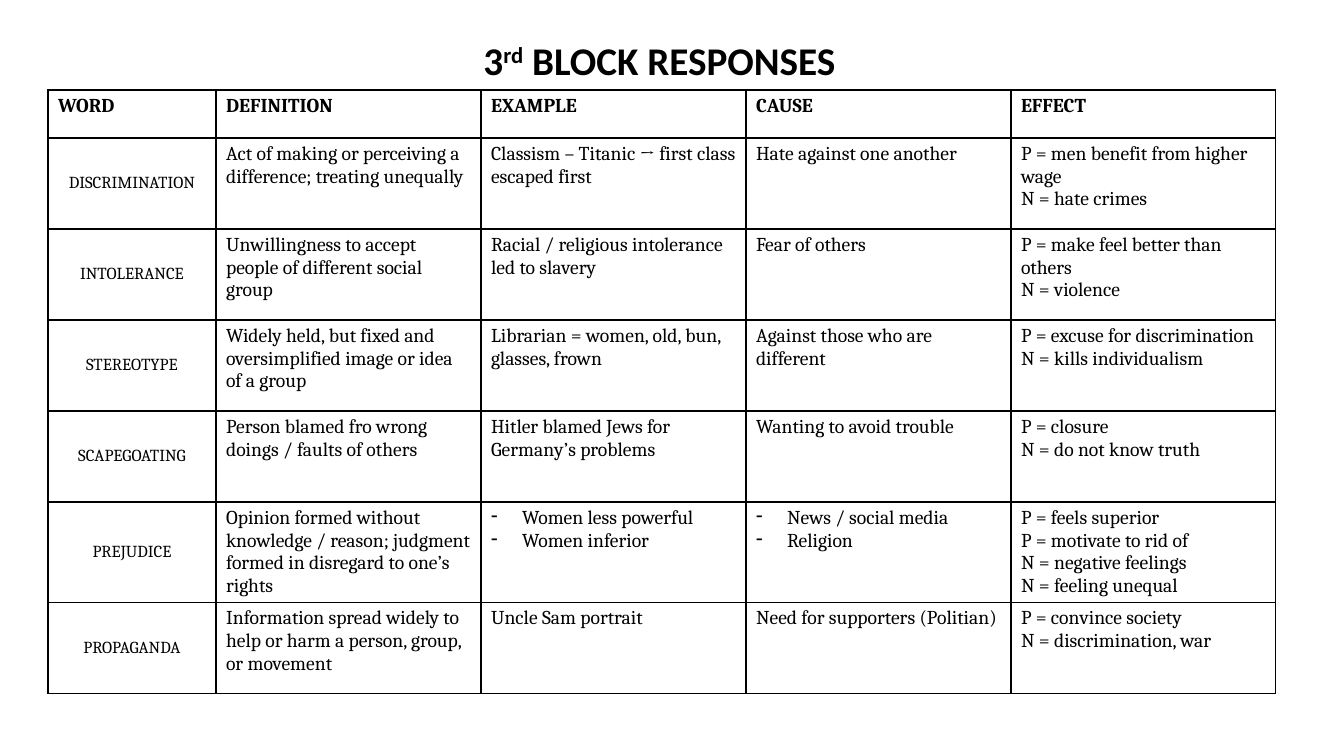
import pptx
import pptx.util
import pptx.dml.color
import pptx.enum.text
import pptx.oxml

SCALE = 914400 / 100.8
COLORS = {"ink": "000000", "paper": "FFFFFF"}
NS = 'xmlns:a="http://schemas.openxmlformats.org/drawingml/2006/main"'
CENTER = pptx.enum.text.PP_ALIGN.CENTER


def px(n):
    return pptx.util.Emu(round(n * SCALE))


def style(run, face, size, bold):
    run.font.name = face
    run.font.size = pptx.util.Pt(size)
    run.font.bold = bold
    run.font.color.rgb = pptx.dml.color.RGBColor.from_string(COLORS["ink"])


# Wording: one line break per paragraph, "- " for a bullet
ROWS = [
    ["WORD", "DEFINITION", "EXAMPLE", "CAUSE", "EFFECT"],
    ["DISCRIMINATION",
     "Act of making or perceiving a difference; treating unequally",
     "Classism – Titanic → first class escaped first",
     "Hate against one another",
     "P = men benefit from higher wage\nN = hate crimes"],
    ["INTOLERANCE",
     "Unwillingness to accept people of different social group",
     "Racial / religious intolerance led to slavery",
     "Fear of others",
     "P = make feel better than others\nN = violence"],
    ["STEREOTYPE",
     "Widely held, but fixed and oversimplified image or idea of a group",
     "Librarian = women, old, bun, glasses, frown",
     "Against those who are different",
     "P = excuse for discrimination\nN = kills individualism"],
    ["SCAPEGOATING",
     "Person blamed fro wrong doings / faults of others",
     "Hitler blamed Jews for Germany’s problems",
     "Wanting to avoid trouble",
     "P = closure\nN = do not know truth"],
    ["PREJUDICE",
     "Opinion formed without knowledge / reason; judgment formed in disregard to one’s rights",
     "- Women less powerful\n- Women inferior",
     "- News / social media\n- Religion",
     "P = feels superior\nP = motivate to rid of\nN = negative feelings\nN = feeling unequal"],
    ["PROPAGANDA",
     "Information spread widely to help or harm a person, group, or movement",
     "Uncle Sam portrait",
     "Need for supporters (Politian)",
     "P = convince society\nN = discrimination, war"],
]
WIDTHS = [168] + [265] * 4
HEIGHTS = [48] + [91] * 4 + [97, 91]

deck = pptx.Presentation()
deck.slide_width, deck.slide_height = px(1344), px(756)
slide = deck.slides.add_slide(deck.slide_layouts[6])

# Table grid
frame = slide.shapes.add_table(len(ROWS), len(WIDTHS), px(48), px(90),
                               px(sum(WIDTHS)), px(sum(HEIGHTS)))
table = frame.table
table.first_row = table.horz_banding = False
for col, width in zip(table.columns, WIDTHS):
    col.width = px(width)
for row, height in zip(table.rows, HEIGHTS):
    row.height = px(height)

# Cells
for r, words in enumerate(ROWS):
    for c, text in enumerate(words):
        cell = table.cell(r, c)
        cell.text_frame.text = text
        term = r > 0 and c == 0
        if term:
            cell.vertical_anchor = pptx.enum.text.MSO_ANCHOR.MIDDLE
        for para in cell.text_frame.paragraphs:
            if term:
                para.alignment = CENTER
            if para.text.startswith("- "):
                para.text = para.text[2:]
                props = para._p.get_or_add_pPr()
                props.set("marL", str(px(31)))
                props.set("indent", str(-px(31)))
                props.append(pptx.oxml.parse_xml(f'<a:buChar {NS} char="-"/>'))
            for run in para.runs:
                style(run, "Cambria", 12 if term else 14, r == 0)
        # Borders come before the fill
        props = cell._tc.get_or_add_tcPr()
        for side in ("lnL", "lnR", "lnT", "lnB"):
            props.append(pptx.oxml.parse_xml(
                f'<a:{side} {NS} w="12700"><a:solidFill>'
                f'<a:srgbClr val="{COLORS["ink"]}"/></a:solidFill></a:{side}>'))
        cell.fill.solid()
        cell.fill.fore_color.rgb = pptx.dml.color.RGBColor.from_string(COLORS["paper"])

# Title
title = slide.shapes.add_textbox(px(294), px(31), px(731), px(57))
title.text_frame.word_wrap = True
title.text_frame.auto_size = pptx.enum.text.MSO_AUTO_SIZE.SHAPE_TO_FIT_TEXT
para = title.text_frame.paragraphs[0]
para.alignment = CENTER
for text, rise in (("3", 0), ("rd", 30000), (" BLOCK RESPONSES", 0)):
    run = para.add_run()
    run.text = text
    style(run, "Calibri", 28, True)
    if rise:
        run._r.get_or_add_rPr().set("baseline", str(rise))

deck.save("out.pptx")
